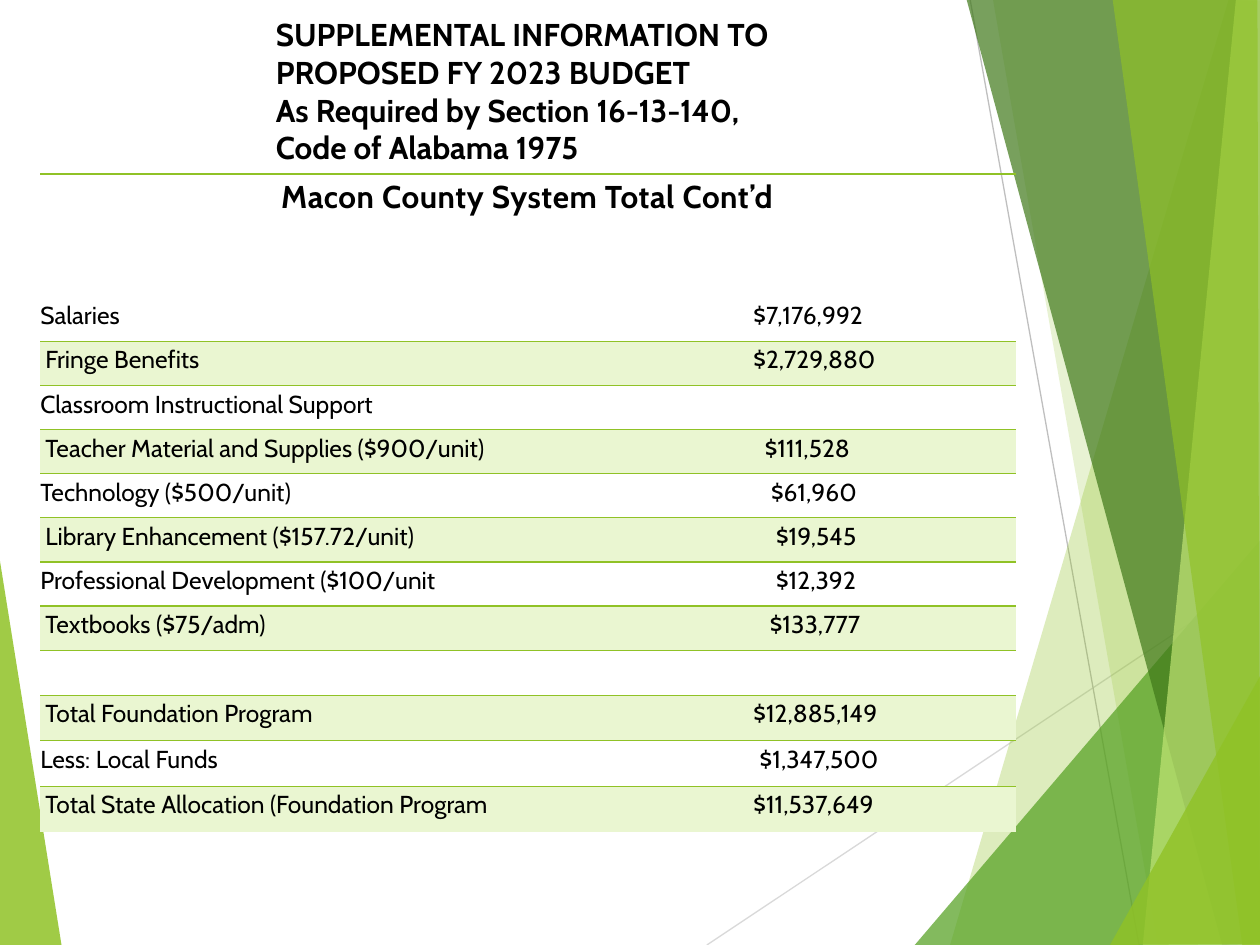
from dataclasses import dataclass

from lxml.etree import SubElement
from pptx import Presentation
from pptx.dml.color import RGBColor
from pptx.enum.shapes import MSO_CONNECTOR
from pptx.enum.text import MSO_ANCHOR, PP_ALIGN
from pptx.oxml import parse_xml
from pptx.oxml.ns import nsdecls, qn
from pptx.util import Inches, Pt

FONT = "Cabin"
GREEN = "90C226"
BLACK = "000000"
STRIPE = "EAF6D1"
PLAIN_TABLE_STYLE = "{2D5ABB26-0587-4C30-8999-92F81FD0307C}"
TITLE = (
    "SUPPLEMENTAL INFORMATION TO PROPOSED FY 2023 BUDGET\v"
    "As Required by Section 16-13-140,\vCode of Alabama 1975"
)


@dataclass
class Facet:
    points: list[tuple[float, float]]
    color: str
    opacity: int


@dataclass
class Ray:
    start: tuple[float, float]
    end: tuple[float, float]
    color: str


@dataclass
class BudgetLine:
    label: str = ""
    amount: str = ""
    indent: float = 0.12


LEFT_FACET = Facet([(-0.01, 4.39), (0.49, 7.51), (-0.01, 7.5)], GREEN, 85)
RAYS = [
    Ray((5.61, 7.5), (10.01, 4.57), "D9D9D9"),
    Ray((7.7, 0), (9.04, 7.5), "BFBFBF"),
]
RIGHT_FACETS = [
    Facet([(9.75, 0), (7.54, 7.5), (10.02, 7.51), (10.01, 0.01)], GREEN, 30),
    Facet([(7.88, -0.01), (9.19, 7.5), (10.01, 7.5), (10.01, -0.01)], GREEN, 20),
    Facet([(7.26, 7.5), (10, 4.29), (10.01, 7.5)], "54A021", 72),
    Facet([(7.67, -0.01), (9.7, 7.5), (10.01, 7.49), (10.01, -0.01)], "3F7819", 70),
    Facet([(9.81, -0.01), (9.07, 7.5), (10.01, 7.5), (10, -0.01)], "C0E474", 70),
    Facet([(8.83, -0.01), (9.86, 7.5), (10, 7.5), (9.98, -0.01)], GREEN, 65),
    Facet([(8.81, 7.5), (10.01, 5.35), (10.01, 7.49)], GREEN, 80),
]
BUDGET = [
    BudgetLine("Salaries", "$7,176,992"),
    BudgetLine("Fringe Benefits", "$2,729,880"),
    BudgetLine("Classroom Instructional Support"),
    BudgetLine("Teacher Material and Supplies ($900/unit)", "$111,528", 0.21),
    BudgetLine("Technology ($500/unit)", "$61,960", 0.26),
    BudgetLine("Library Enhancement ($157.72/unit)", "$19,545", 0.3),
    BudgetLine("Professional Development ($100/unit", "$12,392", 0.3),
    BudgetLine("Textbooks ($75/adm)", "$133,777", 0.25),
    BudgetLine(),
    BudgetLine("Total Foundation Program", "$12,885,149"),
    BudgetLine("Less: Local Funds", "$1,347,500", 0.17),
    BudgetLine("Total State Allocation (Foundation Program", "$11,537,649"),
]
COLUMN_WIDTHS = [5.54, 2.2]
ROW_HEIGHTS = [0.98] + [0.35] * 8 + [0.36] * 4


def rgb(color: str) -> RGBColor:
    return RGBColor.from_string(color)


def draw_facet(page, facet: Facet) -> None:
    corners = [(Inches(x), Inches(y)) for x, y in facet.points]
    builder = page.shapes.build_freeform(*corners[0], scale=1.0)
    builder.add_line_segments(corners[1:], close=True)
    shape = builder.convert_to_shape()
    shape.shadow.inherit = False
    shape.fill.solid()
    shape.fill.fore_color.rgb = rgb(facet.color)
    shape.line.fill.background()
    color_element = next(shape._element.spPr.iter(qn("a:srgbClr")))
    SubElement(color_element, qn("a:alpha")).set("val", str(facet.opacity * 1000))


def draw_ray(page, ray: Ray) -> None:
    ends = [Inches(length) for length in (*ray.start, *ray.end)]
    connector = page.shapes.add_connector(MSO_CONNECTOR.STRAIGHT, *ends)
    connector.line.color.rgb = rgb(ray.color)
    connector.line.width = Pt(0.75)
    SubElement(connector._element.spPr, qn("a:effectLst"))


def format_spans(text_frame, size: float, bold: bool) -> None:
    for para in text_frame.paragraphs:
        for span in para.runs:
            span.font.name = FONT
            span.font.size = Pt(size)
            span.font.bold = bold
            span.font.color.rgb = rgb(BLACK)


def set_top_border(cell, width: float) -> None:
    border = parse_xml(
        f'<a:lnT {nsdecls("a")} w="{Pt(width)}"><a:solidFill>'
        f'<a:srgbClr val="{GREEN}"/></a:solidFill></a:lnT>'
    )
    cell._tc.get_or_add_tcPr().insert(0, border)


def fill_cell(cell, text: str, indent: float, striped: bool) -> None:
    cell.text_frame.text = text
    format_spans(cell.text_frame, 14, False)
    cell.margin_left = Inches(indent)
    cell.margin_right = Inches(0.07)
    cell.margin_top = Inches(0.03)
    cell.margin_bottom = Inches(0)
    if striped:
        cell.fill.solid()
        cell.fill.fore_color.rgb = rgb(STRIPE)
        set_top_border(cell, 0.75)
    else:
        cell.fill.background()


def draw_title(page) -> None:
    box = page.shapes.add_textbox(Inches(2.09), Inches(0.07), Inches(5.02), Inches(1.31))
    box.text_frame.word_wrap = True
    box.text_frame.text = TITLE
    format_spans(box.text_frame, 18, True)


def draw_heading(table) -> None:
    heading = table.cell(0, 0)
    heading.merge(table.cell(0, 1))
    fill_cell(heading, "Macon County System Total Cont’d", 0, False)
    heading.margin_right = Inches(0.01)
    heading.vertical_anchor = MSO_ANCHOR.TOP
    para = heading.text_frame.paragraphs[0]
    para.alignment = PP_ALIGN.CENTER
    format_spans(heading.text_frame, 18, True)
    para.runs[0]._r.get_or_add_rPr().set("spc", "30")
    for column in range(2):
        set_top_border(table.cell(0, column), 1.5)


def draw_budget(page) -> None:
    frame = page.shapes.add_table(
        len(ROW_HEIGHTS), len(COLUMN_WIDTHS), Inches(0.32), Inches(1.38),
        Inches(sum(COLUMN_WIDTHS)), Inches(sum(ROW_HEIGHTS)),
    )
    table = frame.table
    table.first_row = False
    table.horz_banding = False
    next(frame._element.iter(qn("a:tableStyleId"))).text = PLAIN_TABLE_STYLE
    for column, width in zip(table.columns, COLUMN_WIDTHS):
        column.width = Inches(width)
    for row, height in zip(table.rows, ROW_HEIGHTS):
        row.height = Inches(height)
    draw_heading(table)
    for number, entry in enumerate(BUDGET, start=1):
        striped = number % 2 == 0
        fill_cell(table.cell(number, 0), entry.label, 0.04 if striped else 0, striped)
        fill_cell(table.cell(number, 1), entry.amount, entry.indent, striped)


def main() -> None:
    deck = Presentation()
    deck.slide_width = Inches(10)
    deck.slide_height = Inches(7.5)
    page = deck.slides.add_slide(deck.slide_layouts[6])
    draw_facet(page, LEFT_FACET)
    for ray in RAYS:
        draw_ray(page, ray)
    for facet in RIGHT_FACETS:
        draw_facet(page, facet)
    draw_budget(page)
    draw_title(page)
    deck.save("out.pptx")


if __name__ == "__main__":
    main()
